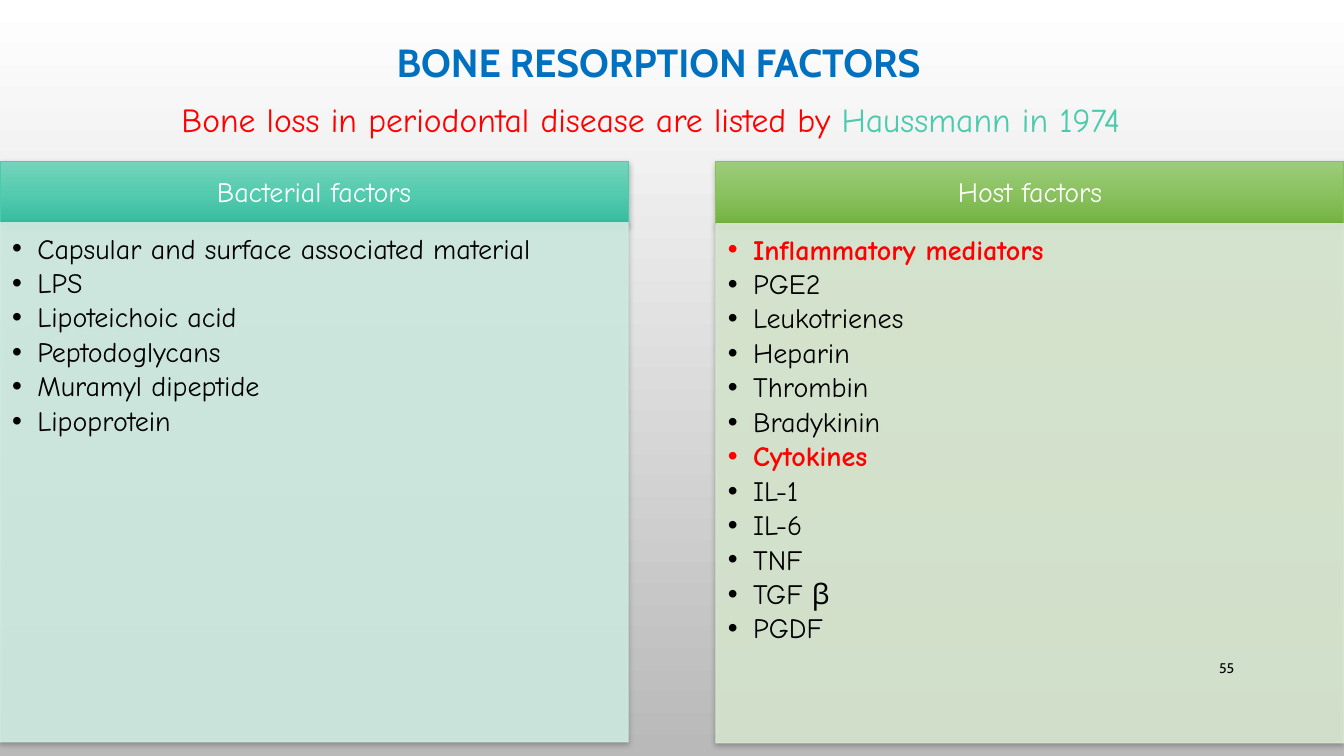
from copy import deepcopy
from dataclasses import dataclass

from pptx import Presentation
from pptx.dml.color import RGBColor
from pptx.enum.shapes import MSO_SHAPE as Shape
from pptx.enum.text import MSO_ANCHOR as Anchor, PP_ALIGN as Align
from pptx.oxml import parse_xml
from pptx.oxml.ns import nsdecls, qn
from pptx.util import Inches, Pt


@dataclass(frozen=True)
class Theme:
    heading_font: str = "Cabin"
    body_font: str = "Comic Neue"
    title_size: int = 28
    subtitle_size: int = 24
    body_size: int = 20
    number_size: int = 10
    blue: str = "0070C0"
    red: str = "FF0000"
    teal: str = "4BCAAD"
    green: str = "86C157"
    black: str = "000000"
    white: str = "FFFFFF"
    backdrop: tuple = ("FFFFFF", "B9B9B9")
    teal_shades: tuple = ("77D4BC", "54CBAF", "36BA9C")
    green_shades: tuple = ("9ECC7E", "8AC25F", "73B142")
    pale_teal: str = "D0ECE3"
    pale_green: str = "D9E9D1"


def rgb(code):
    return RGBColor.from_string(code)


def add_xml(parent, xml):
    """Append a drawing element written as '<a:name .../>'."""
    head, rest = xml.split(" ", 1)
    parent.append(parse_xml(f"{head} {nsdecls('a')} {rest}"))


class SlideBuilder:
    """Places elements by percentages of the slide's width and height."""

    def __init__(self, deck, theme):
        self.deck, self.theme = deck, theme
        self.page = deck.slides.add_slide(deck.slide_layouts[6])
        self.gradient(self.page.background.fill, self.page.element, theme.backdrop)

    def place(self, left, top, width, height):
        across, down = self.deck.slide_width / 100, self.deck.slide_height / 100
        return [int(length) for length in
                (left * across, top * down, width * across, height * down)]

    def gradient(self, fill, element, shades):
        fill.gradient()
        fill.gradient_angle = 270
        stops = element.find(".//" + qn("a:gsLst"))
        for _ in shades[2:]:
            stops.insert(1, deepcopy(stops[0]))
        for index, (stop, shade) in enumerate(zip(fill.gradient_stops, shades)):
            stop.position = index / (len(shades) - 1)
            stop.color.rgb = rgb(shade)

    def style(self, para, font, size, color, bold=False):
        para.font.name, para.font.size = font, Pt(size)
        para.font.bold, para.font.color.rgb = bold, rgb(color)

    def spacing(self, para, after):
        para.line_spacing = 0.9
        add_xml(para._p.get_or_add_pPr(),
                f'<a:spcAft ><a:spcPct val="{after * 1000}"/></a:spcAft>')

    def text(self, area, spans, font, size, bold=False, align=Align.CENTER, anchor=Anchor.TOP):
        box = self.page.shapes.add_textbox(*self.place(*area))
        frame = box.text_frame
        frame.word_wrap, frame.vertical_anchor = True, anchor
        para = frame.paragraphs[0]
        para.alignment = align
        self.style(para, font, size, spans[0][1], bold)
        for words, color in spans:
            span = para.add_run()
            span.text = words
            if color != spans[0][1]:
                span.font.color.rgb = rgb(color)

    def panel(self, area, line, margins):
        box = self.page.shapes.add_shape(Shape.RECTANGLE, *self.place(*area))
        box.line.color.rgb, box.line.width = rgb(line), Pt(0.75)
        box.shadow.inherit = False
        add_xml(box.element.spPr.find(qn("a:effectLst")),
                f'<a:outerShdw blurRad="{Pt(4)}" dist="{Pt(2)}" dir="5400000" rotWithShape="0">'
                f'<a:srgbClr val="{self.theme.black}"><a:alpha val="28000"/>'
                '</a:srgbClr></a:outerShdw>')
        frame = box.text_frame
        frame.word_wrap = True
        (frame.margin_left, frame.margin_top,
         frame.margin_right, frame.margin_bottom) = map(Inches, margins)
        return box

    def header(self, area, words, shades, line):
        box = self.panel(area, line, (0.16, 0.09, 0.16, 0.09))
        self.gradient(box.fill, box.element.spPr, shades)
        box.text_frame.vertical_anchor = Anchor.MIDDLE
        para = box.text_frame.paragraphs[0]
        para.text, para.alignment = words, Align.CENTER
        self.spacing(para, 35)
        self.style(para, self.theme.body_font, self.theme.body_size, self.theme.white)

    def bullets(self, area, items, color, strong=()):
        theme = self.theme
        box = self.panel(area, color, (0.12, 0.12, 0.16, 0.17))
        box.fill.solid()
        box.fill.fore_color.rgb = rgb(color)
        for tint in box.element.spPr.iter(qn("a:srgbClr")):
            if tint.get("val") == color:
                add_xml(tint, '<a:alpha val="90000"/>')
        frame = box.text_frame
        frame.vertical_anchor = Anchor.TOP
        for index, item in enumerate(items):
            para = frame.add_paragraph() if index else frame.paragraphs[0]
            para.text, para.alignment = item, Align.LEFT
            self.spacing(para, 15)
            properties = para._p.get_or_add_pPr()
            properties.set("marL", str(Inches(0.25)))
            properties.set("indent", str(-Inches(0.25)))
            add_xml(properties, '<a:buFont typeface="Arial"/>')
            add_xml(properties, '<a:buChar char="•"/>')
            bold = item in strong
            self.style(para, theme.body_font, theme.body_size,
                       theme.red if bold else theme.black, bold)


def main():
    deck = Presentation()
    deck.slide_width, deck.slide_height = Inches(13.33), Inches(7.5)
    theme = Theme()
    slide = SlideBuilder(deck, theme)

    # Two columns of factors
    bacterial = ["Capsular and surface associated material", "LPS", "Lipoteichoic acid",
                 "Peptodoglycans", "Muramyl dipeptide", "Lipoprotein"]
    host = ["Inflammatory mediators", "PGE2", "Leukotrienes", "Heparin", "Thrombin",
            "Bradykinin", "Cytokines", "IL-1", "IL-6", "TNF", "TGF β", "PGDF"]
    strong = ("Inflammatory mediators", "Cytokines")
    width = 46.74
    columns = [
        (0, 29.47, "Bacterial factors", bacterial, theme.teal_shades, theme.teal, theme.pale_teal),
        (100 - width, 29.6, "Host factors", host, theme.green_shades, theme.green,
         theme.pale_green),
    ]
    for left, top, name, items, shades, line, pale in columns:
        slide.header((left, 21.33, width, 8.4), name, shades, line)
        slide.bullets((left, top, width, 68.67), items, pale, strong)

    # Slide number
    slide.text((86.27, 85.73, 6.3, 5.33), [("55", theme.black)], theme.heading_font,
               theme.number_size, align=Align.RIGHT, anchor=Anchor.MIDDLE)

    # Title and subtitle
    slide.text((16.28, 4.4, 65.42, 7.6), [("BONE RESORPTION FACTORS", theme.blue)],
               theme.heading_font, theme.title_size, bold=True)
    slide.text((0, 12.4, 97.67, 6.67),
               [("Bone loss in periodontal disease are listed by ", theme.red),
                ("Haussmann in 1974 ", theme.teal)],
               theme.body_font, theme.subtitle_size)

    deck.save("out.pptx")


if __name__ == "__main__":
    main()
